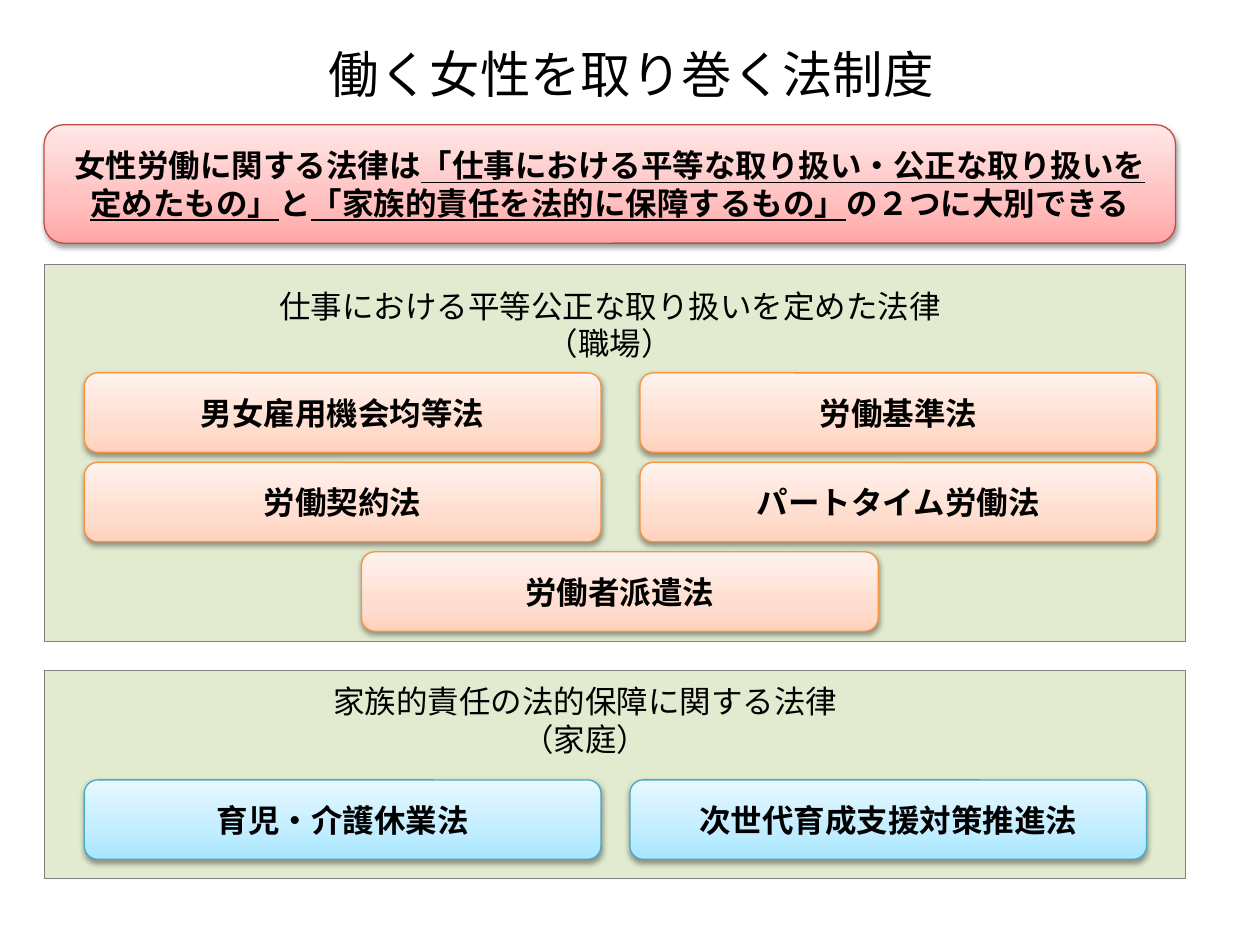
"""Build a slide on the laws that surround working women."""
from copy import deepcopy

from lxml import etree
from pptx import Presentation
from pptx import util as u
from pptx.dml.color import RGBColor
from pptx.enum import shapes, text
from pptx.oxml import ns

BLACK = RGBColor(0x00, 0x00, 0x00)
GREEN = RGBColor(0xD7, 0xE4, 0xBD)
GRAY = RGBColor(0x80, 0x80, 0x80)
ORANGE = RGBColor(0xF6, 0x92, 0x40)
TEAL = RGBColor(0x46, 0xAA, 0xC5)
RED = RGBColor(0xBF, 0x4C, 0x48)
PEACH_STOPS = [RGBColor(0xFF, 0xD2, 0xBD), RGBColor(0xFF, 0xDE, 0xD0), RGBColor(0xFF, 0xF2, 0xED)]
SKY_STOPS = [RGBColor(0xA7, 0xE6, 0xFF), RGBColor(0xC1, 0xED, 0xFF), RGBColor(0xE7, 0xF8, 0xFF)]
PINK_STOPS = [RGBColor(0xFF, 0xA6, 0xA5), RGBColor(0xFF, 0xC0, 0xBF), RGBColor(0xFF, 0xE7, 0xE7)]
JAPANESE = "Noto Sans CJK JP"


def write(box, lines, font):
    """Fill a box with centred lines, each a list of (words, underlined)."""
    frame = box.text_frame
    layout = {"word_wrap": True, "auto_size": text.MSO_AUTO_SIZE.NONE,
              "vertical_anchor": text.MSO_ANCHOR.MIDDLE}
    for name, value in layout.items():
        setattr(frame, name, value)
    for number, line in enumerate(lines):
        para = frame.add_paragraph() if number else frame.paragraphs[0]
        para.alignment = text.PP_ALIGN.CENTER
        for words, underlined in line:
            span = para.add_run()
            span.text = words
            for name, value in {**font, "underline": underlined}.items():
                setattr(span.font, name, value)
            span.font.color.rgb = BLACK
            east_asian = etree.SubElement(span.font._element, ns.qn("a:ea"))
            east_asian.set("typeface", JAPANESE)


def add_card(page, place, stops, outline, lines, face):
    """Add a rounded card with a three-stop gradient and a soft shadow."""
    card = page.shapes.add_shape(shapes.MSO_SHAPE.ROUNDED_RECTANGLE, *map(u.Inches, place))
    card.fill.gradient()
    card.fill.gradient_angle = 90
    stop_list = card._element.spPr.find(".//" + ns.qn("a:gsLst"))
    stop_list.append(deepcopy(stop_list[-1]))
    for stop, position, color in zip(card.fill.gradient_stops, (0, 0.35, 1), stops):
        stop.position = position
        stop.color.rgb = color
    card.line.color.rgb = outline
    card.line.width = u.Pt(0.75)
    card.shadow.inherit = False
    effects = card._element.spPr.find(ns.qn("a:effectLst"))
    shadow = etree.SubElement(effects, ns.qn("a:outerShdw"), blurRad=str(u.Pt(3.1)),
                              dist=str(u.Pt(1.6)), dir="5400000", rotWithShape="0")
    shade = etree.SubElement(shadow, ns.qn("a:srgbClr"), val=str(BLACK))
    etree.SubElement(shade, ns.qn("a:alpha"), val="38000")
    write(card, lines, {"name": face, "size": u.Pt(18), "bold": True})


deck = Presentation()
deck.slide_width, deck.slide_height = u.Inches(10), u.Inches(7.5)
page = deck.slides.add_slide(deck.slide_layouts[5])

title = page.shapes.title
title_place = {"left": 0.51, "top": 0.28, "width": 9, "height": 0.61}
for name, value in title_place.items():
    setattr(title, name, u.Inches(value))
write(title, [[("働く女性を取り巻く法制度", False)]], {"name": "Calibri", "size": u.Pt(28.8)})

for top, height in ((5.32, 1.65), (2.1, 2.99)):
    panel = page.shapes.add_shape(shapes.MSO_SHAPE.RECTANGLE, u.Inches(0.35), u.Inches(top),
                                  u.Inches(9.06), u.Inches(height))
    panel.fill.solid()
    panel.fill.fore_color.rgb = GREEN
    tint = panel._element.spPr.find(ns.qn("a:solidFill"))[0]
    etree.SubElement(tint, ns.qn("a:alpha"), val="71000")
    panel.line.color.rgb = GRAY
    panel.line.width = u.Pt(0.25)
    panel.shadow.inherit = False

headings = [
    ((1.22, 2.18, 7.24, 0.79), "仕事における平等公正な取り扱いを定めた法律", "（職場）"),
    ((2.32, 5.4, 4.65, 0.63), "家族的責任の法的保障に関する法律", "（家庭）"),
]
for place, subject, setting in headings:
    heading = page.shapes.add_textbox(*map(u.Inches, place))
    write(heading, [[(subject, False)], [(setting, False)]], {"name": JAPANESE, "size": u.Pt(18)})

work_top, row_step = 2.96, 0.71
work_laws = [
    (0.67, 0, "男女雇用機会均等法"),
    (5.08, 0, "労働基準法"),
    (0.67, 1, "労働契約法"),
    (5.08, 1, "パートタイム労働法"),
    (2.87, 2, "労働者派遣法"),
]
for left, row, law in work_laws:
    add_card(page, (left, work_top + row * row_step, 4.1, 0.63), PEACH_STOPS, ORANGE,
             [[(law, False)]], "Calibri")
for left, law in ((0.67, "育児・介護休業法"), (5, "次世代育成支援対策推進法")):
    add_card(page, (left, 6.19, 4.1, 0.63), SKY_STOPS, TEAL, [[(law, False)]], "Calibri")

summary = [
    [("女性労働に関する法律は", False), ("「仕事における平等な取り扱い・公正な取り扱いを", True)],
    [("定めたもの」", True), ("と", False), ("「家族的責任を法的に保障するもの」", True),
     ("の２つに大別できる", False)],
]
add_card(page, (0.35, 0.99, 8.98, 0.94), PINK_STOPS, RED, summary, "Arial")

deck.save("out.pptx")
